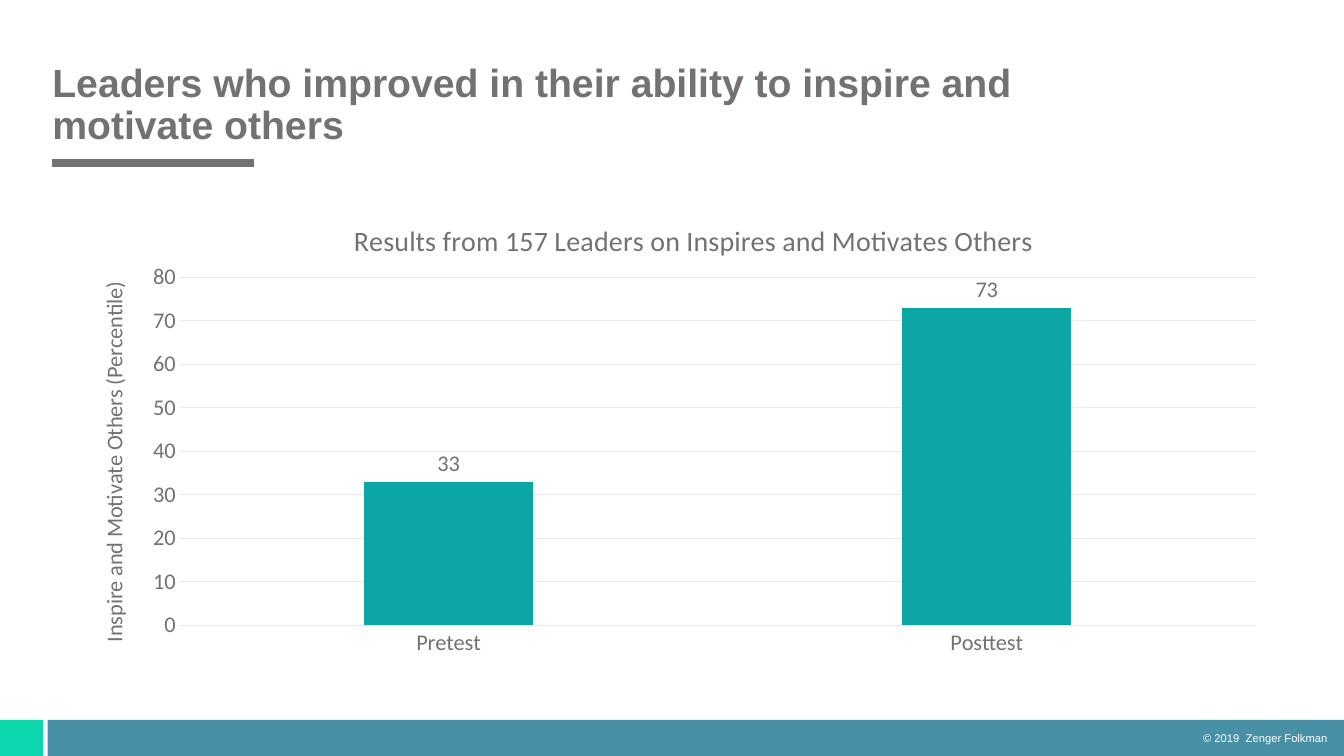
from dataclasses import dataclass

from lxml.etree import SubElement
from pptx import Presentation
from pptx.chart.data import CategoryChartData
from pptx.dml.color import RGBColor
from pptx.enum.chart import XL_CHART_TYPE, XL_LABEL_POSITION, XL_TICK_MARK
from pptx.enum.shapes import MSO_CONNECTOR, MSO_SHAPE
from pptx.enum.text import MSO_ANCHOR, PP_ALIGN
from pptx.oxml import parse_xml
from pptx.oxml.ns import nsdecls, qn
from pptx.util import Cm, Pt


@dataclass(frozen=True)
class Theme:
    """Colours, fonts and type sizes of the slide."""
    grey: str = "747171"
    grid: str = "EAEAEA"
    teal: str = "0CA7A5"
    blue: str = "4890A6"
    mint: str = "0CD6AB"
    white: str = "FFFFFF"
    head_font: str = "Arial"
    chart_font: str = "Calibri"
    title: float = 28
    chart_title: float = 20
    chart_text: float = 16
    footer: float = 8


T = Theme()


def style(font, size, name, color, bold=False):
    """Apply size, typeface, colour and weight to a font."""
    font.size, font.name, font.bold = Pt(size), name, bold
    font.color.rgb = RGBColor.from_string(color)


def add_text(s, box, text, size, color, bold=False, align=PP_ALIGN.LEFT,
             anchor=MSO_ANCHOR.MIDDLE, spacing=1.0):
    """Add a text box; a newline in the text becomes a line break."""
    tf = s.shapes.add_textbox(*map(Cm, box)).text_frame
    tf.word_wrap, tf.vertical_anchor = True, anchor
    p = tf.paragraphs[0]
    p.alignment, p.line_spacing = align, spacing
    for i, line in enumerate(text.split("\n")):
        if i:
            p.add_line_break()
        r = p.add_run()
        r.text = line
        style(r.font, size, T.head_font, color, bold)


def add_bar(s, box, color):
    """Add a plain filled rectangle."""
    sp = s.shapes.add_shape(MSO_SHAPE.RECTANGLE, *map(Cm, box))
    sp.shadow.inherit = False
    sp.fill.solid()
    sp.fill.fore_color.rgb = RGBColor.from_string(color)
    sp.line.fill.background()


def add_header(s, box, text):
    """Place the slide title with a short rule below it."""
    x, y, w, h = box
    add_text(s, box, text, T.title, T.grey, bold=True,
             anchor=MSO_ANCHOR.BOTTOM, spacing=0.9)
    left, rule_y = x + 0.25, y + h + 0.25
    line = s.shapes.add_connector(MSO_CONNECTOR.STRAIGHT, Cm(left), Cm(rule_y),
                                  Cm(left + 5.08), Cm(rule_y))
    line.line.color.rgb = RGBColor.from_string(T.grey)
    line.line.width = Pt(5.25)
    SubElement(line._element.spPr, qn("a:effectLst"))


def add_footer(s, box, text):
    """Place the two-colour band with the copyright line."""
    x, y, w, h = box
    add_bar(s, (x + 1.2, y, w - 1.2, h), T.blue)
    add_bar(s, (x, y, 1.09, h), T.mint)
    add_text(s, (x + w - 7.78, y, 7.62, h), text, T.footer, T.white,
             align=PP_ALIGN.RIGHT)


def set_layout(parent, index, target=None, **fractions):
    """Fix a chart part at fractions of the chart area."""
    for old in parent.findall(qn("c:layout")):
        parent.remove(old)
    kind = f'<c:layoutTarget val="{target}"/>' if target else ""
    modes = "".join(f'<c:{k}Mode val="edge"/>' for k in "xy")
    values = "".join(f'<c:{k} val="{v}"/>' for k, v in fractions.items())
    parent.insert(index, parse_xml(
        f'<c:layout {nsdecls("c")}><c:manualLayout>{kind}{modes}{values}'
        '</c:manualLayout></c:layout>'))


def set_title(owner, text, size, x, y):
    """Give a chart or an axis a title at a fixed place."""
    owner.has_title = True
    title = owner.chart_title if hasattr(owner, "chart_title") else owner.axis_title
    p = title.text_frame.paragraphs[0]
    r = p.add_run()
    r.text = text
    style(r.font, size, T.chart_font, T.grey)
    set_layout(title._element, 1, x=x, y=y)


def set_line(line, color):
    """Draw a thin chart line."""
    line.color.rgb = RGBColor.from_string(color)
    line.width = Pt(0.75)


def add_results_chart(s, box, title, axis_title, results):
    """Place the column chart of test results."""
    data = CategoryChartData()
    data.categories = list(results)
    data.add_series("Series 1", list(results.values()))
    chart = s.shapes.add_chart(XL_CHART_TYPE.COLUMN_CLUSTERED,
                               *map(Cm, box), data).chart
    chart.has_legend = False
    style(chart.font, T.chart_text, T.chart_font, T.grey)
    set_title(chart, title, T.chart_title, 0.23, 0.05)

    cat, val = chart.category_axis, chart.value_axis
    for axis in (cat, val):
        axis.major_tick_mark = axis.minor_tick_mark = XL_TICK_MARK.NONE
        style(axis.tick_labels.font, T.chart_text, T.chart_font, T.grey)
    set_line(cat.format.line, T.grid)
    val.minimum_scale, val.maximum_scale, val.major_unit = 0, 80, 10
    val.format.line.fill.background()
    set_line(val.major_gridlines.format.line, T.grid)
    set_title(val, axis_title, T.chart_text, 0.02, 0.18)

    plot = chart.plots[0]
    plot.gap_width, plot.overlap, plot.vary_by_categories = 219, -27, False
    fill = plot.series[0].format.fill
    fill.solid()
    fill.fore_color.rgb = RGBColor.from_string(T.teal)
    labels = plot.series[0].data_labels
    labels.show_value = True
    labels.position = XL_LABEL_POSITION.OUTSIDE_END
    style(labels.font, T.chart_text, T.chart_font, T.grey)
    set_layout(chart._chartSpace.chart.plotArea, 0, "inner",
               x=0.09, y=0.18, w=0.89, h=0.73)


def main():
    """Build and save the slide."""
    prs = Presentation()
    prs.slide_width, prs.slide_height = Cm(33.87), Cm(19.05)
    s = prs.slides.add_slide(prs.slide_layouts[6])
    add_footer(s, (0, 18.14, 33.87, 0.91), "© 2019  Zenger Folkman")
    add_header(s, (1.07, 1.57, 31.88, 2.29),
               "Leaders who improved in their ability to inspire and\nmotivate others")
    add_results_chart(s, (1.78, 4.83, 30.48, 12.01),
                      "Results from 157 Leaders on Inspires and Motivates Others",
                      "Inspire and Motivate Others (Percentile)",
                      {"Pretest": 33, "Posttest": 73})
    prs.save("out.pptx")


if __name__ == "__main__":
    main()
